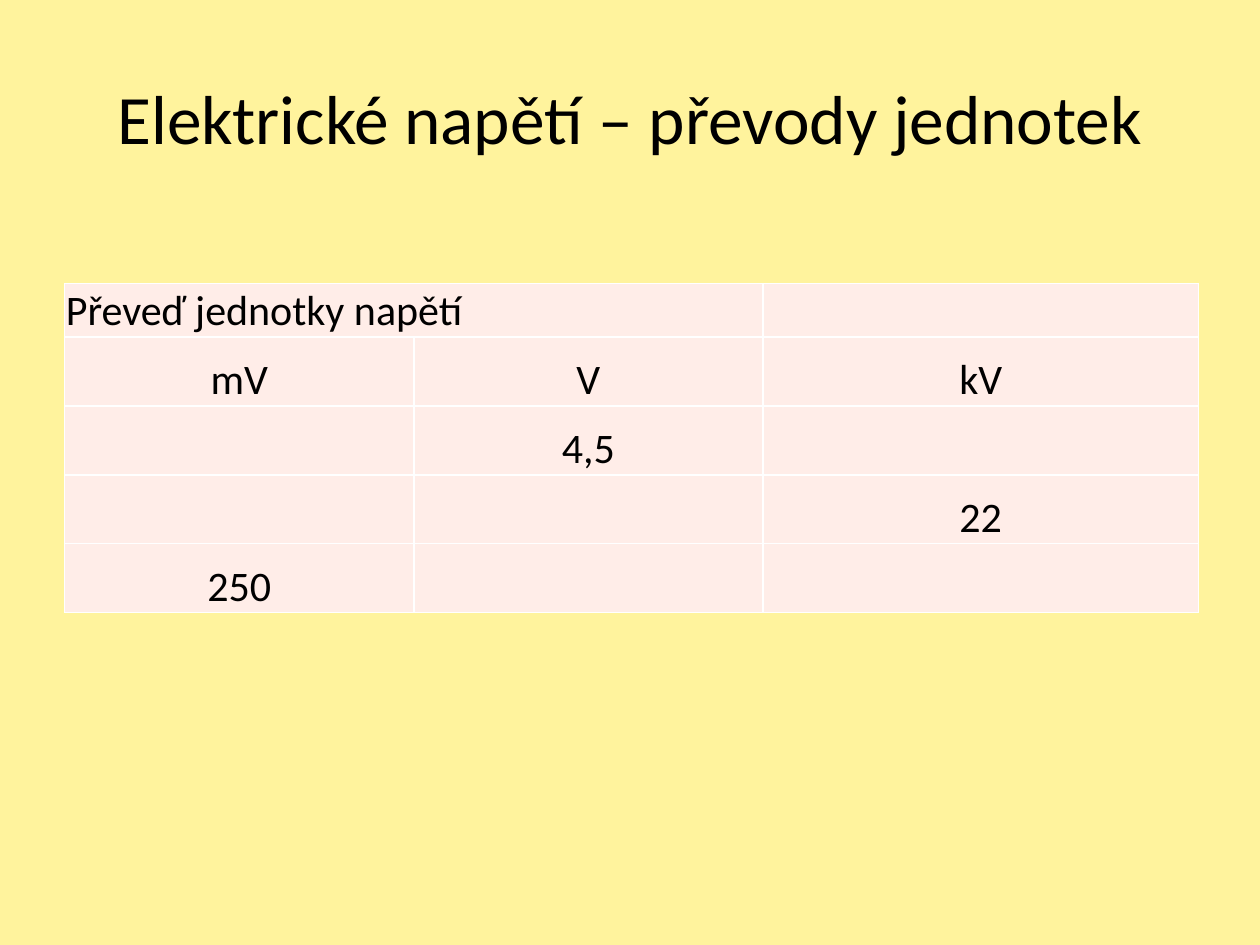
from lxml import etree
from pptx import Presentation
from pptx.dml.color import RGBColor
from pptx.enum.text import MSO_ANCHOR, PP_ALIGN
from pptx.oxml.ns import qn
from pptx.util import Pt

MID, LOW = MSO_ANCHOR.MIDDLE, MSO_ANCHOR.BOTTOM
LEFT, MIDDLE = PP_ALIGN.LEFT, PP_ALIGN.CENTER
HUES = {"page": "FFF39D", "cell": "FFEDE8", "edge": "FFFFFF", "text": "000000"}
FONT = "Calibri"
COLS = [199.5, 199.5, 249]
ROWS = [30.6] + [39.4] * 4
DATA = [
    ["Převeď jednotky napětí", "", ""],
    ["mV", "V", "kV"],
    ["", "4,5", ""],
    ["", "", "22"],
    ["250", "", ""],
]


def write(frame, text, size, align):
    para = frame.paragraphs[0]
    para.alignment = align
    run = para.add_run()
    run.text = text
    for key, val in {"name": FONT, "size": Pt(size), "bold": False}.items():
        setattr(run.font, key, val)
    run.font.color.rgb = RGBColor.from_string(HUES["text"])


def edge(cell):
    props = cell._tc.get_or_add_tcPr()
    for side in ("lnL", "lnR", "lnT", "lnB"):
        line = etree.SubElement(props, qn(f"a:{side}"), w=str(Pt(1)))
        fill = etree.SubElement(line, qn("a:solidFill"))
        etree.SubElement(fill, qn("a:srgbClr"), val=HUES["edge"])


deck = Presentation()
deck.slide_width, deck.slide_height = Pt(720), Pt(540)
slide = deck.slides.add_slide(deck.slide_layouts[5])
slide.background.fill.solid()
slide.background.fill.fore_color.rgb = RGBColor.from_string(HUES["page"])

title = slide.shapes.title
place = {"left": 36, "top": 21.6, "width": 648, "height": 90}
for key, val in place.items():
    setattr(title, key, Pt(val))
title.text_frame.vertical_anchor = MID
write(title.text_frame, "Elektrické napětí – převody jednotek", 39.6, MIDDLE)

table = slide.shapes.add_table(
    len(ROWS), len(COLS), Pt(37), Pt(162), Pt(sum(COLS)), Pt(sum(ROWS))
).table
for col, wide in zip(table.columns, COLS):
    col.width = Pt(wide)
for row, high in zip(table.rows, ROWS):
    row.height = Pt(high)
table.cell(0, 0).merge(table.cell(0, 1))

style = {
    "margin_left": Pt(0.7),
    "margin_right": Pt(0.7),
    "margin_top": Pt(0.7),
    "margin_bottom": Pt(0),
    "vertical_anchor": LOW,
}
for r, line in enumerate(DATA):
    for c, text in enumerate(line):
        cell = table.cell(r, c)
        edge(cell)
        cell.fill.solid()
        cell.fill.fore_color.rgb = RGBColor.from_string(HUES["cell"])
        for key, val in style.items():
            setattr(cell, key, val)
        if text:
            write(cell.text_frame, text, 24, MIDDLE if r else LEFT)

deck.save("out.pptx")
